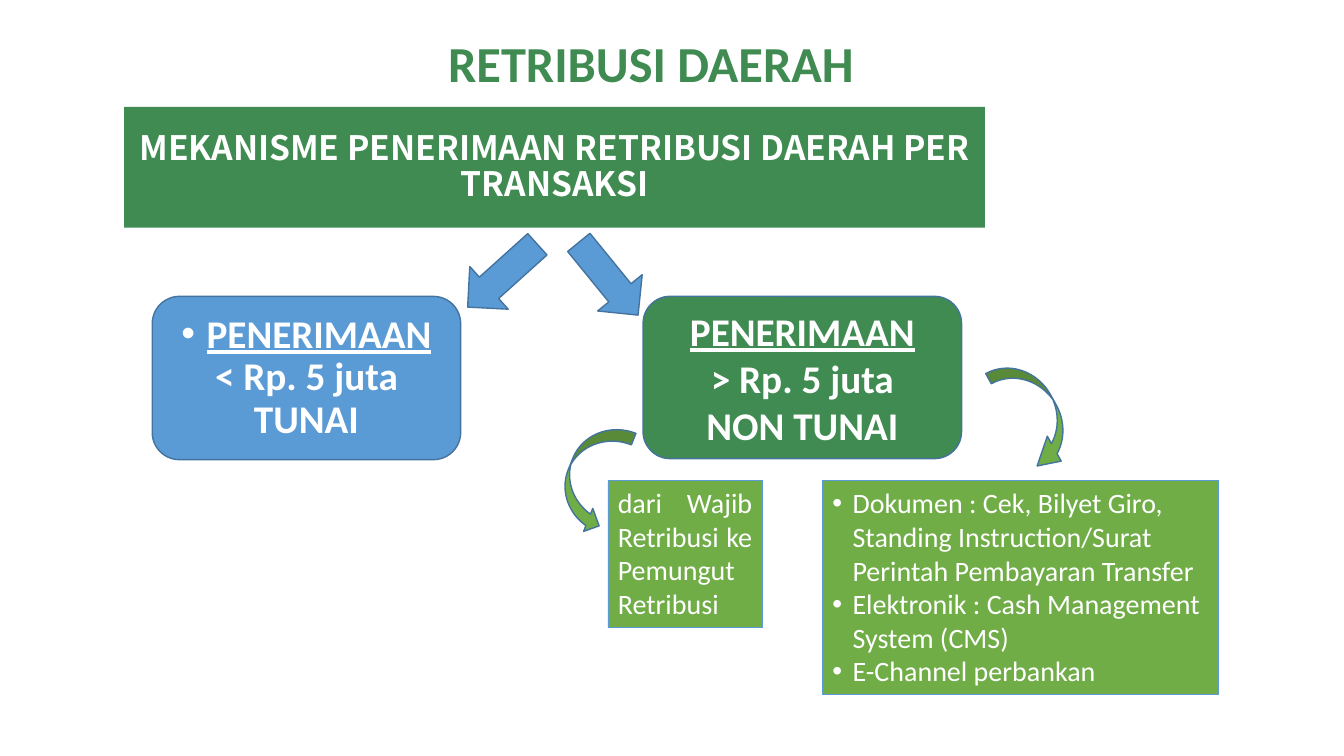
import pptx
import pptx.util
import pptx.dml.color
import pptx.enum.shapes
import pptx.enum.text
import pptx.oxml.ns
import lxml.etree

WIDTH = pptx.util.Inches(13.333)
HEIGHT = pptx.util.Inches(7.5)
GREEN, LIME, BLUE = "3F8B51", "70AD47", "5B9BD5"
EDGE, WHITE = "43739E", "FFFFFF"
KIND = pptx.enum.shapes.MSO_SHAPE
ALIGN = pptx.enum.text.PP_ALIGN
ANCHOR = pptx.enum.text.MSO_ANCHOR


def color(value):
    return pptx.dml.color.RGBColor.from_string(value)


def place(left, top, width, height):
    return (round(WIDTH * left / 100), round(HEIGHT * top / 100),
            round(WIDTH * width / 100), round(HEIGHT * height / 100))


def add_shape(page, kind, area, fill, edge=None, weight=1, rotation=0):
    shape = page.shapes.add_shape(kind, *place(*area))
    shape.shadow.inherit = False
    shape.fill.solid()
    shape.fill.fore_color.rgb = color(fill)
    if edge:
        shape.line.color.rgb = color(edge)
        shape.line.width = pptx.util.Pt(weight)
    else:
        shape.line.fill.background()
    shape.rotation = rotation
    return shape


def add_bullet(para, indent):
    properties = para._p.get_or_add_pPr()
    properties.set("marL", str(pptx.util.Inches(indent)))
    properties.set("indent", str(-pptx.util.Inches(indent)))
    font = lxml.etree.SubElement(properties, pptx.oxml.ns.qn("a:buFont"))
    font.set("typeface", "Arial")
    bullet = lxml.etree.SubElement(properties, pptx.oxml.ns.qn("a:buChar"))
    bullet.set("char", "•")


def write(box, lines, size, ink=WHITE, align=ALIGN.CENTER, anchor=ANCHOR.MIDDLE,
          bold=True, font="Calibri", spacing=None, bullets=0, indent=0.2, grow=False):
    frame = box.text_frame
    frame.word_wrap = True
    frame.vertical_anchor = anchor
    if grow:
        frame.auto_size = pptx.enum.text.MSO_AUTO_SIZE.SHAPE_TO_FIT_TEXT
    frame.text = "\n".join(lines)
    for index, para in enumerate(frame.paragraphs):
        para.alignment = align
        if spacing:
            para.line_spacing = spacing
        if index < bullets:
            add_bullet(para, indent)
        for span in para.runs:
            span.font.name = font
            span.font.size = pptx.util.Pt(size)
            span.font.bold = bold
            span.font.color.rgb = color(ink)


def add_amount(page, area, fill, lines, **style):
    box = add_shape(page, KIND.ROUNDED_RECTANGLE, area, fill, EDGE)
    write(box, lines, 28, **style)
    box.text_frame.paragraphs[0].runs[0].font.underline = True


def add_detail(page, area, lines, align, bullets=0):
    box = add_shape(page, KIND.RECTANGLE, area, LIME, BLUE, 0.5)
    write(box, lines, 20, align=align, anchor=ANCHOR.TOP, bold=False,
          bullets=bullets, grow=True)


def main():
    deck = pptx.Presentation()
    deck.slide_width, deck.slide_height = WIDTH, HEIGHT
    page = deck.slides.add_slide(deck.slide_layouts[6])

    add_amount(page, (11.33, 39.2, 22.95, 21.6), BLUE,
               ["PENERIMAAN", "< Rp. 5 juta TUNAI"], spacing=0.9, bullets=1, indent=0.25)
    add_amount(page, (47.85, 39.2, 23.7, 21.47), GREEN,
               ["PENERIMAAN", "> Rp. 5 juta", "NON TUNAI"])

    banner = add_shape(page, KIND.RECTANGLE, (9.23, 14.13, 64.05, 16), GREEN)
    write(banner, ["MEKANISME PENERIMAAN RETRIBUSI DAERAH PER TRANSAKSI"], 24,
          font="Noto Sans CJK SC", spacing=0.9)

    add_detail(page, (45.23, 63.6, 11.48, 19.33),
               ["dari Wajib Retribusi ke Pemungut Retribusi"], ALIGN.JUSTIFY)
    add_detail(page, (61.2, 63.6, 29.48, 28.27), [
        "Dokumen : Cek, Bilyet Giro, Standing Instruction/Surat Perintah Pembayaran Transfer",
        "Elektronik : Cash Management System (CMS)",
        "E-Channel perbankan",
    ], ALIGN.LEFT, bullets=3)

    channel_arrow = add_shape(page, KIND.CURVED_LEFT_ARROW, (75.3, 46.93, 3.45, 15.87),
                              LIME, EDGE, rotation=330.9)
    for index, share in enumerate((0.25, 0.615, 0.505)):
        channel_arrow.adjustments[index] = share
    add_shape(page, KIND.CURVED_RIGHT_ARROW, (42.23, 55.6, 3.68, 14.8),
              LIME, EDGE, rotation=21.7)
    for left, top, rotation in ((33.9, 32.67, 318), (41.78, 33.07, 230.8)):
        add_shape(page, KIND.LEFT_ARROW, (left, top, 6.98, 7.6), BLUE, EDGE, rotation=rotation)

    title = page.shapes.add_textbox(*place(29.7, 3.6, 37.5, 9.47))
    write(title, ["RETRIBUSI DAERAH"], 36, ink=GREEN, anchor=ANCHOR.TOP, grow=True)

    deck.save("out.pptx")


if __name__ == "__main__":
    main()
